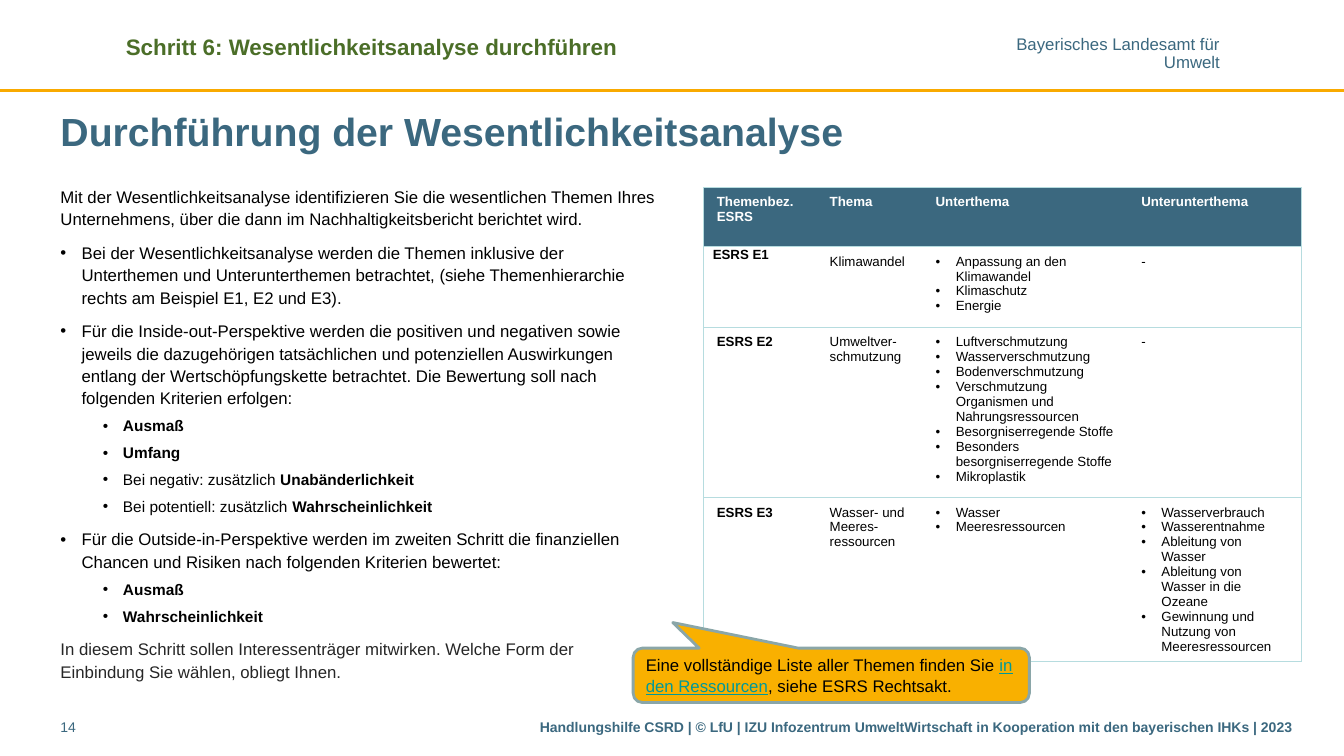
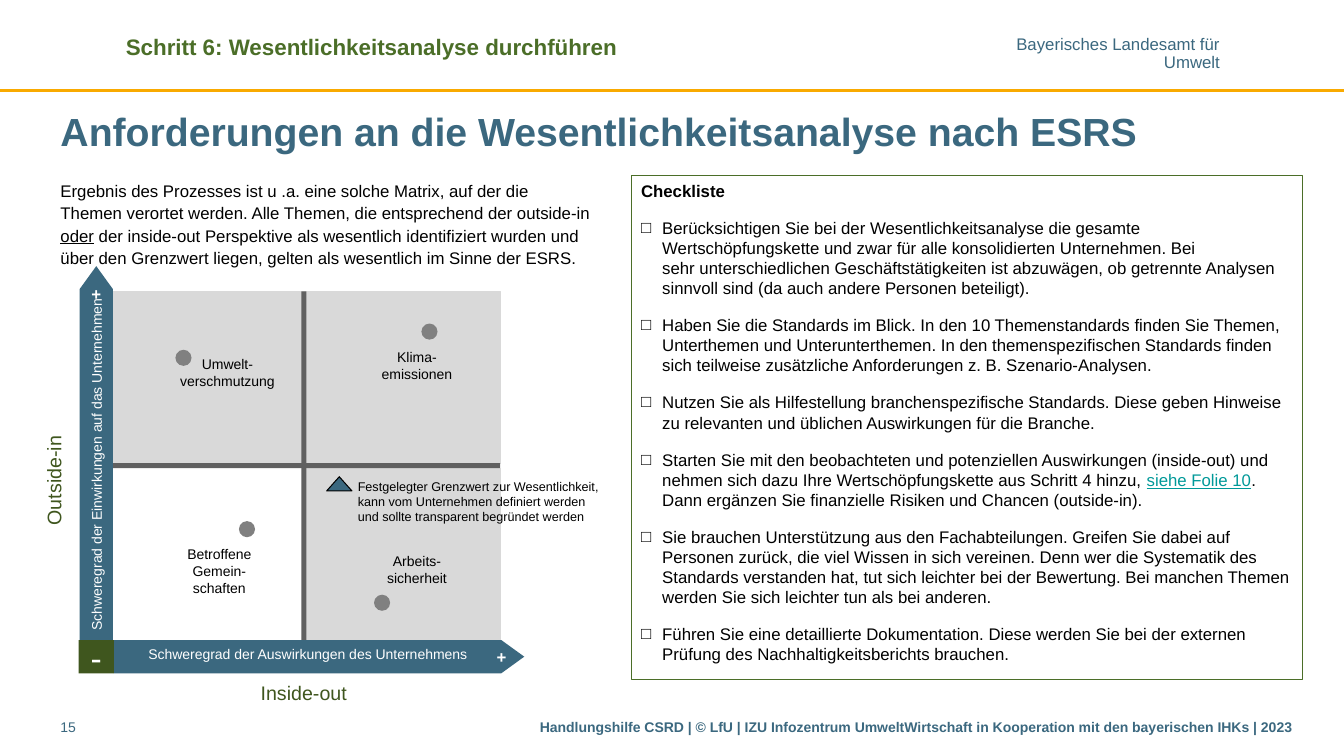
from lxml import etree
from pptx import Presentation
from pptx.dml.color import RGBColor
from pptx.enum.shapes import MSO_SHAPE
from pptx.enum.text import MSO_ANCHOR, MSO_AUTO_SIZE, PP_ALIGN
from pptx.oxml.ns import qn
from pptx.util import Inches, Pt

LEFT, CENTER, RIGHT = PP_ALIGN.LEFT, PP_ALIGN.CENTER, PP_ALIGN.RIGHT
TOP, MIDDLE = MSO_ANCHOR.TOP, MSO_ANCHOR.MIDDLE
RECT, OVAL, TRIANGLE = MSO_SHAPE.RECTANGLE, MSO_SHAPE.OVAL, MSO_SHAPE.ISOSCELES_TRIANGLE
ARROW, CALLOUT = MSO_SHAPE.RIGHT_ARROW, MSO_SHAPE.ROUNDED_RECTANGULAR_CALLOUT

FONT = "Arial"
BLUE, GREEN, DARK_GREEN = "3B687F", "4B6E28", "3F561E"
GOLD, AMBER, TEAL, LINK = "F9AA00", "F9B000", "8AA6A8", "009999"
GRID, LIGHT, MID, DARK = "B6DCDF", "D9D9D9", "808080", "606060"
BLACK, INK, WHITE = "000000", "262626", "FFFFFF"

INSETS = (0.1, 0.05, 0.1, 0.05)
FLAT = (0, 0.05, 0, 0.05)
NONE = (0, 0, 0, 0)
BOLD = {"bold": True}
LINKED = {"color": LINK, "underline": True}


def rgb(value):
    return RGBColor.from_string(value)


# ---- Text ----
def para(*runs, **fmt):
    """A paragraph: runs are strings or (text, format) pairs."""
    return runs, fmt


def add_bullet(p, char, indent, hang):
    pPr = p._p.get_or_add_pPr()
    pPr.set("marL", str(Inches(indent)))
    pPr.set("indent", str(-Inches(hang)))
    color = etree.SubElement(pPr, qn("a:buClr"))
    etree.SubElement(color, qn("a:srgbClr")).set("val", BLACK)
    etree.SubElement(pPr, qn("a:buFont")).set("typeface", FONT)
    etree.SubElement(pPr, qn("a:buChar")).set("char", char)


def add_run(p, text, size=12, color=BLACK, bold=False, underline=False):
    for i, part in enumerate(text.split("\n")):
        if i:
            p.add_line_break()
        r = p.add_run()
        r.text = part
        r.font.name, r.font.size = FONT, Pt(size)
        r.font.bold, r.font.underline = bold, underline
        r.font.color.rgb = rgb(color)


def write(tf, paras, insets=INSETS, anchor=TOP, wrap=True, **base):
    """Fill a text frame; base holds the format each paragraph may override."""
    tf.word_wrap, tf.auto_size = wrap, MSO_AUTO_SIZE.NONE
    tf.vertical_anchor = anchor
    tf.margin_left, tf.margin_top, tf.margin_right, tf.margin_bottom = map(Inches, insets)
    write_paras(tf, paras, **base)


def write_paras(tf, paras, **base):
    for i, item in enumerate([paras] if isinstance(paras, str) else paras):
        runs, own = para(item) if isinstance(item, str) else item
        fmt = {**base, **own}
        p = tf.add_paragraph() if i else tf.paragraphs[0]
        p.alignment = fmt.pop("align", LEFT)
        p.level = fmt.pop("level", 0)
        p.line_spacing = fmt.pop("spacing", None)
        before = fmt.pop("before", 0)
        p.space_before = Pt(before if i else 0)
        p.space_after = Pt(fmt.pop("after", 0))
        bullet = fmt.pop("bullet", None)
        if bullet:
            add_bullet(p, *bullet)
        for run in runs:
            text, extra = (run, {}) if isinstance(run, str) else run
            add_run(p, text, **{**fmt, **extra})


def add_text(s, x, y, w, h, paras, rotation=0, **fmt):
    tb = s.shapes.add_textbox(Inches(x), Inches(y), Inches(w), Inches(h))
    tb.rotation = rotation
    write(tb.text_frame, paras, **fmt)


def add_box(s, kind, x, y, w, h, fill=None, line=None, width=0.75, adj=(), rotation=0):
    sp = s.shapes.add_shape(kind, Inches(x), Inches(y), Inches(w), Inches(h))
    sp.shadow.inherit = False
    sp.rotation = rotation
    for i, value in enumerate(adj):
        sp.adjustments[i] = value
    if fill:
        sp.fill.solid()
        sp.fill.fore_color.rgb = rgb(fill)
    else:
        sp.fill.background()
    if line:
        sp.line.color.rgb = rgb(line)
        sp.line.width = Pt(width)
    else:
        sp.line.fill.background()
    return sp


# ---- Frame shared by all slides ----
def add_slide(prs, title, number):
    s = prs.slides.add_slide(prs.slide_layouts[5])
    rule = s.shapes.add_connector(1, 0, Inches(0.9), prs.slide_width, Inches(0.9))
    rule.line.color.rgb, rule.line.width = rgb(GOLD), Pt(2)
    etree.SubElement(rule._element.spPr, qn("a:effectLst"))
    add_text(s, 10.07, 0.37, 2.03, 0.34, ["Bayerisches Landesamt für", "Umwelt"],
             insets=NONE, wrap=False, align=RIGHT, spacing=0.85, color=BLUE)
    add_text(s, 1.15, 0.28, 5.35, 0.37, "Schritt 6: Wesentlichkeitsanalyse durchführen",
             size=16, color=GREEN, bold=True)
    head = s.shapes.title
    head.left, head.top, head.width, head.height = map(Inches, (0.6, 1.02, 12.31, 0.55))
    write(head.text_frame, title, insets=FLAT, anchor=MIDDLE, size=28, color=BLUE, bold=True)
    add_text(s, 0.6, 7.08, 0.7, 0.31, str(number), insets=FLAT, size=10, color=BLUE)
    add_text(s, 5.17, 7.08, 7.74, 0.31,
             "Handlungshilfe CSRD | © LfU | IZU Infozentrum UmweltWirtschaft in Kooperation "
             "mit den bayerischen IHKs | 2023", align=RIGHT, size=10, color=BLUE, bold=True)
    return s


# ---- Slide 14: carrying out the analysis ----
def add_procedure(s, x, y, w, h):
    lead = {"bullet": ("•", 0.21, 0.21)}
    sub = {"bullet": ("•", 0.62, 0.2), "level": 1, "size": 11, "before": 6, "spacing": None}
    add_text(s, x, y, w, h, [
        "Mit der Wesentlichkeitsanalyse identifizieren Sie die wesentlichen Themen Ihres "
        "Unternehmens, über die dann im Nachhaltigkeitsbericht berichtet wird.",
        para("Bei der Wesentlichkeitsanalyse werden die Themen inklusive der Unterthemen und "
             "Unterunterthemen betrachtet, (siehe Themenhierarchie rechts am Beispiel E1, E2 "
             "und E3).", **lead),
        para("Für die Inside-out-Perspektive werden die positiven und negativen sowie jeweils "
             "die dazugehörigen tatsächlichen und potenziellen Auswirkungen entlang der "
             "Wertschöpfungskette betrachtet. Die Bewertung soll nach folgenden Kriterien "
             "erfolgen:", **lead),
        para(("Ausmaß", BOLD), **sub),
        para(("Umfang", BOLD), **sub),
        para("Bei negativ: zusätzlich ", ("Unabänderlichkeit", BOLD), **sub),
        para("Bei potentiell: zusätzlich ", ("Wahrscheinlichkeit", BOLD), **sub),
        para("Für die Outside-in-Perspektive werden im zweiten Schritt die finanziellen Chancen "
             "und Risiken nach folgenden Kriterien bewertet:", **lead),
        para(("Ausmaß", BOLD), **sub),
        para(("Wahrscheinlichkeit", BOLD), **sub),
        para("In diesem Schritt sollen Interessenträger mitwirken. Welche Form der Einbindung "
             "Sie wählen, obliegt Ihnen.", color=INK),
    ], insets=FLAT, spacing=Pt(16), before=8)


def set_borders(cell, **colors):
    tcPr = cell._tc.get_or_add_tcPr()
    for side in "LRTB":
        ln = etree.SubElement(tcPr, qn("a:ln" + side))
        if colors.get(side):
            ln.set("w", str(Pt(0.75)))
            fill = etree.SubElement(ln, qn("a:solidFill"))
            etree.SubElement(fill, qn("a:srgbClr")).set("val", colors[side])
        else:
            etree.SubElement(ln, qn("a:noFill"))


def add_topics(s, x, y):
    widths, heights = (1.12, 1.05, 2.04, 1.72), (0.59, 0.8, 1.69, 1.54)
    # A list in a cell is bulleted, a string is plain
    rows = [
        ["Themenbez. ESRS", "Thema", "Unterthema", "Unterunterthema"],
        ["ESRS E1", "Klimawandel",
         ["Anpassung an den Klimawandel", "Klimaschutz", "Energie"], "-"],
        ["ESRS E2", "Umweltver-schmutzung",
         ["Luftverschmutzung", "Wasserverschmutzung", "Bodenverschmutzung",
          "Verschmutzung Organismen und Nahrungsressourcen", "Besorgniserregende Stoffe",
          "Besonders besorgniserregende Stoffe", "Mikroplastik"], "-"],
        ["ESRS E3", "Wasser- und Meeres-ressourcen", ["Wasser", "Meeresressourcen"],
         ["Wasserverbrauch", "Wasserentnahme", "Ableitung von Wasser",
          "Ableitung von Wasser in die Ozeane",
          "Gewinnung und Nutzung von Meeresressourcen"]],
    ]
    table = s.shapes.add_table(len(rows), len(widths), Inches(x), Inches(y),
                               Inches(sum(widths)), Inches(sum(heights))).table
    table.horz_banding = False
    for col, w in zip(table.columns, widths):
        col.width = Inches(w)
    for i, (row, h) in enumerate(zip(rows, heights)):
        table.rows[i].height = Inches(h)
        for j, content in enumerate(row):
            cell = table.cell(i, j)
            set_borders(cell, T=GRID, B=GRID, L=GRID if j == 0 else None,
                        R=GRID if j == len(row) - 1 else None)
            if i:
                cell.fill.background()
            else:
                cell.fill.solid()
                cell.fill.fore_color.rgb = rgb(BLUE)
            insets = (0.09, 0, 0, 0) if (i, j) == (1, 0) else (0.13, 0.07, 0.13, 0.07)
            (cell.margin_left, cell.margin_top,
             cell.margin_right, cell.margin_bottom) = map(Inches, insets)
            write_paras(cell.text_frame, content, size=9.5, color=BLACK if i else WHITE,
                        bold=i == 0 or j == 0,
                        bullet=("•", 0.2, 0.2) if isinstance(content, list) else None)


def add_hint(s, x, y, w, h):
    sp = add_box(s, CALLOUT, x, y, w, h, AMBER, TEAL, 2, adj=(-0.4, -0.97, 0.17))
    write(sp.text_frame, [para("Eine vollständige Liste aller Themen finden Sie ",
                               ("in den Ressourcen", LINKED), ", siehe ESRS Rechtsakt.")],
          anchor=MIDDLE)


# ---- Slide 15: requirements ----
def add_intro(s, x, y, w, h):
    add_text(s, x, y, w, h, [para(
        "Ergebnis des Prozesses ist u .a. eine solche Matrix, auf der die Themen verortet "
        "werden. Alle Themen, die entsprechend der outside-in ", ("oder", {"underline": True}),
        " der inside-out Perspektive als wesentlich identifiziert wurden und über den "
        "Grenzwert liegen, gelten als wesentlich im Sinne der ESRS.")],
        insets=FLAT, spacing=Pt(16))


def add_matrix(s, x, y, w, h):
    bar, band = 0.05, 0.33
    half_w, half_h = w / 2, (h - bar) / 2
    # Quadrants above the threshold, then the threshold bars
    for dx, dy in ((0, 0), (half_w, 0), (half_w, half_h + bar)):
        add_box(s, RECT, x + dx, y + dy, half_w, half_h, LIGHT, LIGHT)
    add_box(s, RECT, x + half_w - bar, y, bar, h, DARK)
    add_box(s, RECT, x, y + half_h, w, bar, DARK)

    # Axes: text, left, top, length, rotation, bottom inset
    for text, dx, dy, length, rotation, bottom in (
            ("Schweregrad der Einwirkungen auf das Unternehmen", -2.02, 1.44, 3.71, 270, 0),
            ("Schweregrad der Auswirkungen des Unternehmens", 0.01, h, 4.07, 0, 0.05)):
        sp = add_box(s, ARROW, x + dx, y + dy, length, band, BLUE, adj=(1, 0.69),
                     rotation=rotation)
        write(sp.text_frame, text, insets=(0, 0, 0, bottom), anchor=MIDDLE, align=CENTER,
              size=10, color=WHITE)
    corner = add_box(s, RECT, x - 0.34, y + h, 0.35, band, DARK_GREEN)
    write(corner.text_frame, "-", anchor=MIDDLE, align=CENTER, size=24, color=WHITE)
    for dx, dy in ((3.64, h + 0.02), (-0.38, -0.12)):
        add_text(s, x + dx, y + dy, 0.43, 0.3, "+", align=CENTER, color=WHITE, bold=True)
    for text, dx, dy, rotation in (("Outside-in", -1.6, 2.18, 270),
                                   ("Inside-out", 0.39, 3.82, 0)):
        add_text(s, x + dx, y + dy, 2.03, 0.34, text, rotation=rotation, align=RIGHT,
                 size=14, color=DARK_GREEN)

    # Topics: label, its left, top and width, then left and top of the dot
    for text, dx, dy, label_w, dot_x, dot_y in (
            ("Umwelt-verschmutzung", 0.66, 0.41, 0.95, 0.62, 0.58),
            ("Klima-emissionen", 2.62, 0.34, 0.79, 3.06, 0.32),
            ("Betroffene Gemein-schaften", 0.66, 2.38, 0.79, 1.25, 2.28),
            ("Arbeits-sicherheit", 2.62, 2.36, 0.79, 2.59, 3.01)):
        add_text(s, x + dx, y + dy, label_w, 0.79, text, insets=NONE, anchor=MIDDLE,
                 align=CENTER, size=10)
        add_box(s, OVAL, x + dot_x, y + dot_y, 0.16, 0.16, MID)

    # Note on the threshold
    add_box(s, TRIANGLE, x + 2.12, y + 1.84, 0.25, 0.14, BLUE, BLACK)
    add_text(s, x + 2.33, y + 1.81, 2.68, 0.56,
             "Festgelegter Grenzwert zur Wesentlichkeit, kann vom Unternehmen definiert werden "
             "und sollte transparent begründet werden", size=9)


def add_checklist(s, x, y, w, h):
    items = [
        ["Berücksichtigen Sie bei der Wesentlichkeitsanalyse die gesamte\nWertschöpfungskette "
         "und zwar für alle konsolidierten Unternehmen. Bei\nsehr unterschiedlichen "
         "Geschäftstätigkeiten ist abzuwägen, ob getrennte Analysen sinnvoll sind (da auch "
         "andere Personen beteiligt)."],
        ["Haben Sie die Standards im Blick. In den 10 Themenstandards finden Sie Themen, "
         "Unterthemen und Unterunterthemen. In den themenspezifischen Standards finden sich "
         "teilweise zusätzliche Anforderungen z. B. Szenario-Analysen."],
        ["Nutzen Sie als Hilfestellung branchenspezifische Standards. Diese geben Hinweise zu "
         "relevanten und üblichen Auswirkungen für die Branche."],
        ["Starten Sie mit den beobachteten und potenziellen Auswirkungen (inside-out) und "
         "nehmen sich dazu Ihre Wertschöpfungskette aus Schritt 4 hinzu, ",
         ("siehe Folie 10", LINKED),
         ". Dann ergänzen Sie finanzielle Risiken und Chancen (outside-in)."],
        ["Sie brauchen Unterstützung aus den Fachabteilungen. Greifen Sie dabei auf Personen "
         "zurück, die viel Wissen in sich vereinen. Denn wer die Systematik des Standards "
         "verstanden hat, tut sich leichter bei der Bewertung. Bei manchen Themen werden Sie "
         "sich leichter tun als bei anderen."],
        ["Führen Sie eine detaillierte Dokumentation. Diese werden Sie bei der externen Prüfung "
         "des Nachhaltigkeitsberichts brauchen."],
    ]
    sp = add_box(s, RECT, x, y, w, h, line=GREEN)
    write(sp.text_frame, [para("Checkliste", bold=True)]
          + [para(*runs, bullet=("□", 0.21, 0.21)) for runs in items], before=6, after=6)


def main():
    prs = Presentation()
    prs.slide_width, prs.slide_height = Inches(13.33), Inches(7.5)

    s = add_slide(prs, "Durchführung der Wesentlichkeitsanalyse", 14)
    add_procedure(s, 0.6, 1.78, 5.93, 5.3)
    add_topics(s, 6.98, 1.86)
    add_hint(s, 6.28, 6.43, 3.93, 0.54)

    s = add_slide(prs, "Anforderungen an die Wesentlichkeitsanalyse nach ESRS", 15)
    add_intro(s, 0.6, 1.72, 5.3, 1)
    add_matrix(s, 1.12, 2.89, 3.84, 3.46)
    add_checklist(s, 6.26, 1.74, 6.66, 5)

    prs.save("out.pptx")


if __name__ == "__main__":
    main()
